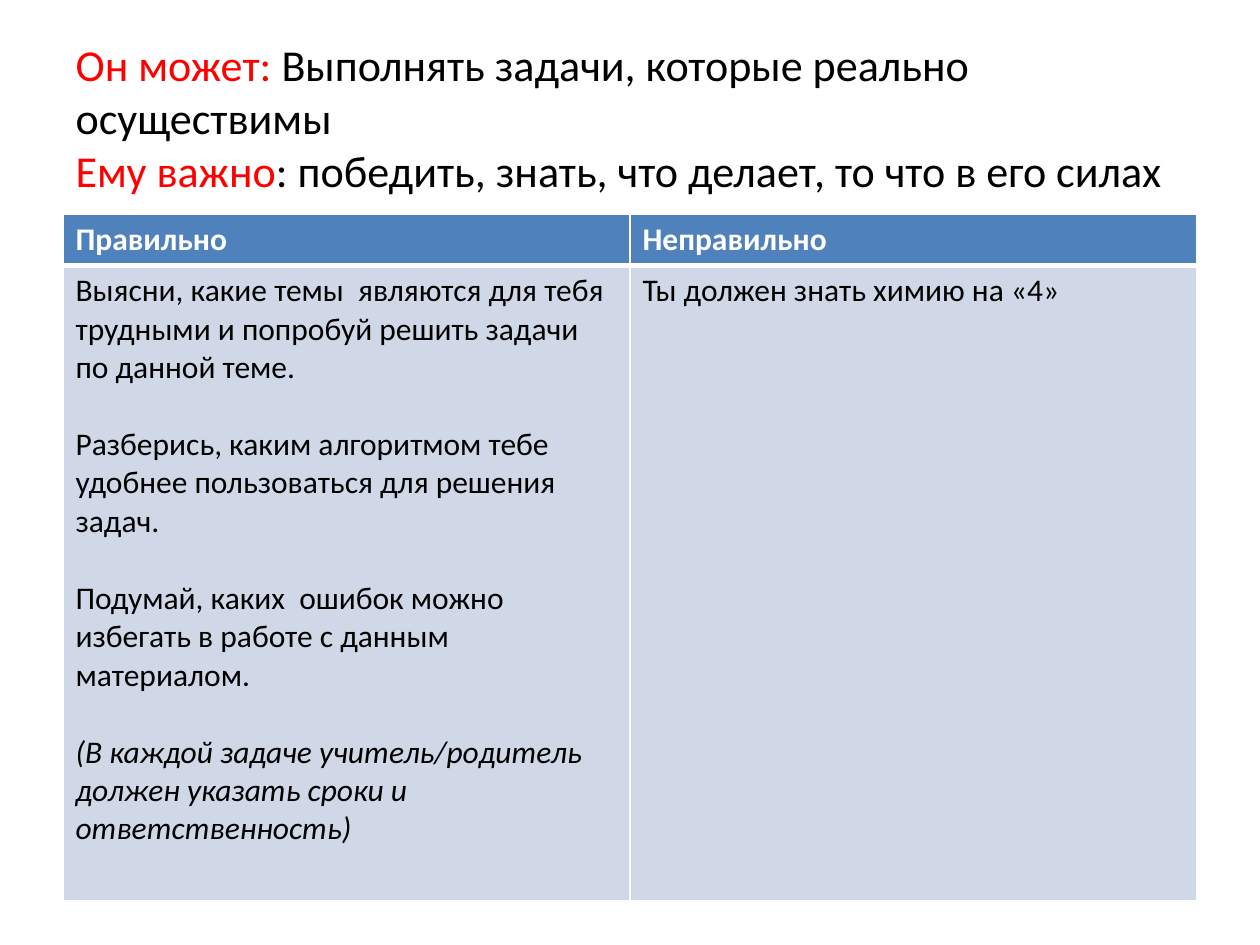
from dataclasses import dataclass

from lxml.etree import SubElement
from pptx import Presentation
from pptx.dml.color import RGBColor
from pptx.enum.text import MSO_ANCHOR, MSO_AUTO_SIZE, PP_ALIGN
from pptx.oxml import parse_xml
from pptx.oxml.ns import nsdecls, qn
from pptx.util import Inches, Pt


@dataclass(frozen=True)
class Theme:
    """Colours, font and type sizes of the slide."""
    font: str = "Calibri"
    title_size: float = 25.2
    body_size: float = 18
    paragraph_gap: float = 22
    accent: str = "FF0000"
    text: str = "000000"
    light: str = "FFFFFF"
    header_fill: str = "4F81BD"
    body_fill: str = "D0D8E8"
    thin_border: float = 1
    thick_border: float = 3


TITLE_LINES = [
    [("Он может: ", True), ("Выполнять задачи, которые реально осуществимы", False)],
    [("Ему важно", True), (": победить, знать, что делает, то что в его силах", False)],
]
HEADINGS = ["Правильно", "Неправильно"]
RIGHT_ADVICE = [
    ("Выясни, какие темы  являются для тебя трудными и попробуй решить задачи по данной теме.", False),
    ("Разберись, каким алгоритмом тебе удобнее пользоваться для решения задач.", False),
    ("Подумай, каких  ошибок можно избегать в работе с данным материалом.", False),
    ("(В каждой задаче учитель/родитель должен указать сроки и ответственность)", True),
]
WRONG_ADVICE = [("Ты должен знать химию на «4»", False)]


def add_text(paragraph, text, *, font, size, color, bold=False, italic=False):
    """Add a formatted run to a paragraph."""
    run = paragraph.add_run()
    run.text = text
    run.font.name = font
    run.font.size = Pt(size)
    run.font.bold = bold
    run.font.italic = italic
    run.font.color.rgb = RGBColor.from_string(color)


class SlideBuilder:
    """Build elements on one slide in a shared style."""

    def __init__(self, slide, theme):
        """Keep the slide and its theme."""
        self.slide = slide
        self.theme = theme

    def title(self, lines, left, top, width, height):
        """Place the title and colour its lead words."""
        shape = self.slide.shapes.title
        shape.left, shape.top = Inches(left), Inches(top)
        shape.width, shape.height = Inches(width), Inches(height)
        frame = shape.text_frame
        frame.word_wrap = True
        frame.auto_size = MSO_AUTO_SIZE.NONE
        frame.vertical_anchor = MSO_ANCHOR.MIDDLE
        paragraph = frame.paragraphs[0]
        paragraph.alignment = PP_ALIGN.LEFT
        for index, line in enumerate(lines):
            if index:
                paragraph.add_line_break()
            for text, is_lead in line:
                add_text(paragraph, text, font=self.theme.font, size=self.theme.title_size,
                         color=self.theme.accent if is_lead else self.theme.text)

    def table(self, headings, columns, left, top, width, row_heights):
        """Add a table with a heading and a list of paragraphs per column."""
        theme = self.theme
        frame = self.slide.shapes.add_table(
            len(row_heights), len(headings), Inches(left), Inches(top),
            Inches(width), Inches(sum(row_heights)))
        table = frame.table
        for row, height in zip(table.rows, row_heights):
            row.height = Inches(height)
        for column, (heading, entries) in enumerate(zip(headings, columns)):
            table.columns[column].width = Inches(width / len(headings))
            self.cell(table.cell(0, column), [(heading, False)], theme.header_fill,
                      theme.light, bold=True, bottom=theme.thick_border)
            self.cell(table.cell(1, column), entries, theme.body_fill,
                      theme.text, top=theme.thick_border)

    def cell(self, cell, entries, fill, color, bold=False, top=None, bottom=None):
        """Fill a cell with spaced paragraphs and draw its borders."""
        theme = self.theme
        cell.fill.solid()
        cell.fill.fore_color.rgb = RGBColor.from_string(fill)
        for index, (text, italic) in enumerate(entries):
            frame = cell.text_frame
            paragraph = frame.add_paragraph() if index else frame.paragraphs[0]
            if index:
                paragraph.space_before = Pt(theme.paragraph_gap)
            add_text(paragraph, text, font=theme.font, size=theme.body_size,
                     color=color, bold=bold, italic=italic)
        widths = {"lnL": None, "lnR": None, "lnT": top, "lnB": bottom}
        properties = cell._tc.get_or_add_tcPr()
        for index, (side, points) in enumerate(widths.items()):
            line = parse_xml(f'<a:{side} {nsdecls("a")} w="{Pt(points or theme.thin_border)}"/>')
            solid = SubElement(line, qn("a:solidFill"))
            SubElement(solid, qn("a:srgbClr"), val=theme.light)
            properties.insert(index, line)


def main():
    """Create and save the presentation."""
    presentation = Presentation()
    presentation.slide_width, presentation.slide_height = Inches(10), Inches(7.5)
    slide = presentation.slides.add_slide(presentation.slide_layouts[5])
    builder = SlideBuilder(slide, Theme())
    builder.title(TITLE_LINES, 0.5, 0.3, 9, 1.25)
    builder.table(HEADINGS, [RIGHT_ADVICE, WRONG_ADVICE], 0.5, 1.7, 9, [0.4, 5.04])
    presentation.save("out.pptx")


if __name__ == "__main__":
    main()
